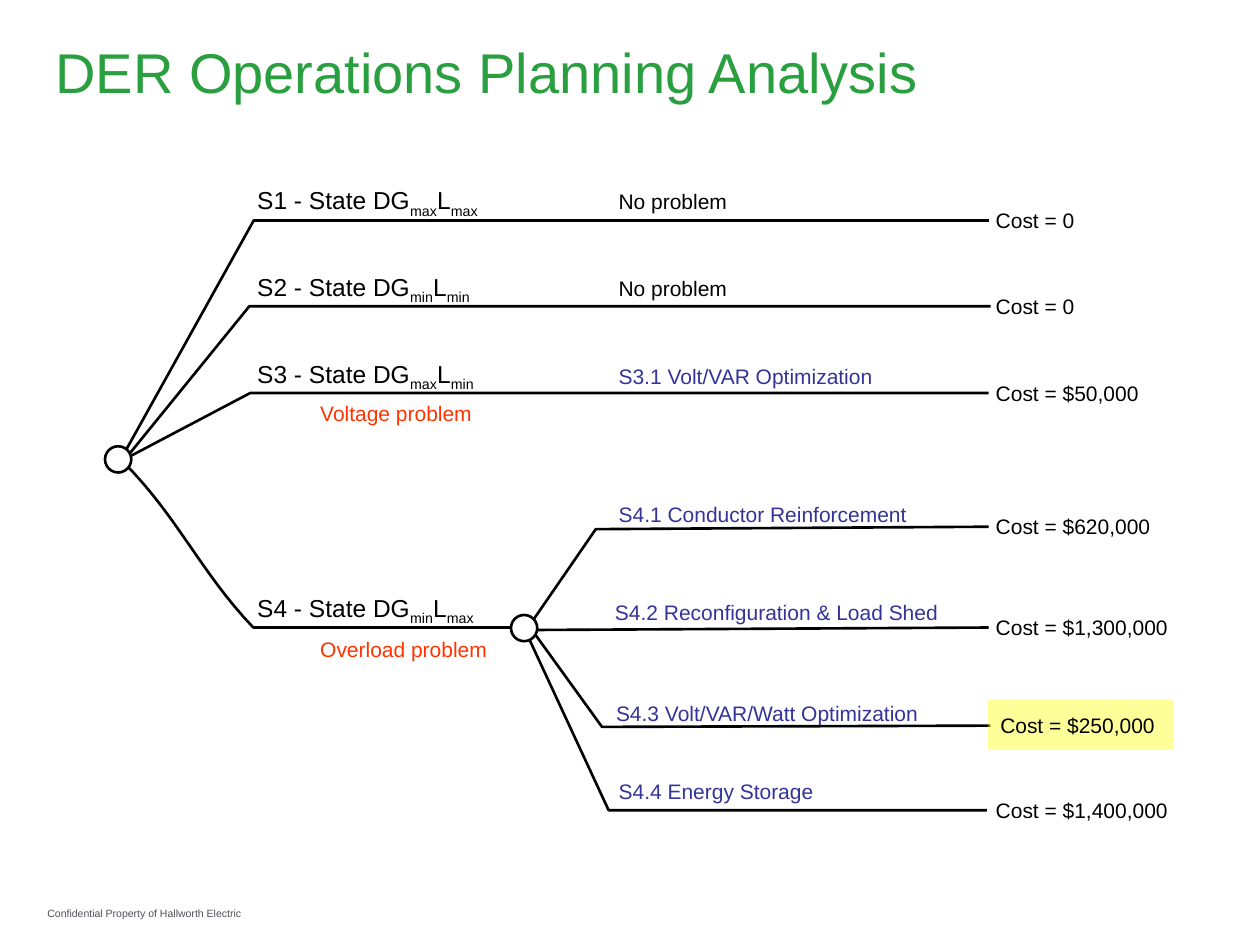
from dataclasses import dataclass

from lxml import etree
from pptx import Presentation
from pptx.dml.color import RGBColor
from pptx.enum.shapes import MSO_CONNECTOR, MSO_SHAPE
from pptx.enum.text import MSO_ANCHOR
from pptx.oxml.ns import qn
from pptx.util import Pt

LINE = MSO_CONNECTOR.STRAIGHT
OVAL = MSO_SHAPE.OVAL
RECT = MSO_SHAPE.RECTANGLE
MID = MSO_ANCHOR.MIDDLE
TOP = MSO_ANCHOR.TOP


@dataclass(frozen=True)
class Theme:
    """Colours, type sizes and line width of the slide."""
    face: str = "Arial"
    ink: str = "000000"
    paper: str = "FFFFFF"
    green: str = "299F3F"
    blue: str = "333399"
    red: str = "FF3300"
    gold: str = "FFFF00"
    gray: str = "4F5156"
    head: float = 32
    state: float = 14
    body: float = 12
    foot: float = 6
    rule: float = 1.5


T = Theme()
NODE = 15
STATES = [
    ("S1", "max", "max", 6, [(11, 159), (85, 26), (505, 26)], "No problem", 8, "Cost = 0"),
    ("S2", "min", "min", 55.5, [(11, 163), (82.5, 75), (506, 75)], "No problem", 57.5, "Cost = 0"),
    ("S3", "max", "min", 105, [(12, 162), (83, 124.6), (505, 124.6)],
     "S3.1 Volt/VAR Optimization", 108, "Cost = $50,000"),
]
BEND = [(10.6, 164.2), (41.5, 195.2), (54.5, 226.9), (84.7, 258.6)]
PROBLEMS = [("Voltage problem", 129), ("Overload problem", 263.6)]
OPTIONS = [
    ("S4.1 Conductor Reinforcement", 61.5, 6.6, [(9.5, 79), (48.5, 22.4), (273, 21)],
     "Cost = $620,000"),
    ("S4.2 Reconfiguration & Load Shed", 59.4, 62.7, [(12.5, 80), (273, 78.6)],
     "Cost = $1,300,000"),
    ("S4.3 Volt/VAR/Watt Optimization", 60, 120.3, [(12, 80), (52, 135.4), (274, 134.7)],
     "Cost = $250,000"),
    ("S4.4 Energy Storage", 61.5, 165, [(8, 80), (55.8, 183), (272, 183)],
     "Cost = $1,400,000"),
]
BEST = "Cost = $250,000"


def style(para, size, color):
    """Set the font of a paragraph."""
    para.font.name = T.face
    para.font.size = Pt(size)
    para.font.color.rgb = RGBColor.from_string(color)


def label(slide, box, text, size=T.body, color=T.ink, pad=(0, 0), anchor=TOP):
    """Place one line of text and return its paragraph."""
    frame = slide.shapes.add_textbox(*map(Pt, box)).text_frame
    frame.word_wrap = True
    frame.vertical_anchor = anchor
    frame.margin_left = frame.margin_right = Pt(pad[0])
    frame.margin_top = frame.margin_bottom = Pt(pad[1])
    para = frame.paragraphs[0]
    para.text = text
    style(para, size, color)
    return para


def stroke(shape):
    """Give a shape or connector the tree's line."""
    shape.line.color.rgb = RGBColor.from_string(T.ink)
    shape.line.width = Pt(T.rule)


def branch(slide, left, top, points):
    """Draw a branch through points measured from left and top."""
    dots = [(Pt(left + x), Pt(top + y)) for x, y in points]
    if len(dots) == 2:
        shape = slide.shapes.add_connector(LINE, *dots[0], *dots[1])
        etree.SubElement(shape._element.spPr, qn("a:effectLst"))
    else:
        maker = slide.shapes.build_freeform(*dots[0])
        maker.add_line_segments(dots[1:], close=False)
        shape = maker.convert_to_shape()
        shape.fill.background()
        shape.shadow.inherit = False
    stroke(shape)


def node(slide, left, top):
    """Draw a round decision node."""
    shape = slide.shapes.add_shape(OVAL, Pt(left), Pt(top), Pt(NODE), Pt(NODE))
    shape.shadow.inherit = False
    shape.fill.solid()
    shape.fill.fore_color.rgb = RGBColor.from_string(T.paper)
    stroke(shape)


def curve(a, b, c, d, steps=16):
    """Return points along a cubic curve."""
    def blend(p, q, r, s, t):
        u = 1 - t
        return u**3 * p + 3 * u * u * t * q + 3 * u * t * t * r + t**3 * s
    return [tuple(blend(*axis, i / steps) for axis in zip(a, b, c, d))
            for i in range(steps + 1)]


def state(slide, left, top, name, gen, load):
    """Write a state name with its two subscripts."""
    para = label(slide, (left, top, 199, 17), f"{name} - State DG", T.state)
    for text, low in ((gen, True), ("L", False), (load, True)):
        run = para.add_run()
        run.text = text
        if low:
            run._r.get_or_add_rPr().set("baseline", "-25000")


def cost(slide, left, top, text):
    """Write a cost beside the end of a branch, tinted if best."""
    if text != BEST:
        label(slide, (left, top - 7.4, 120, 14.4), text)
        return
    shape = slide.shapes.add_shape(RECT, Pt(left - 4.5), Pt(top - 15), Pt(106), Pt(28.8))
    shape.shadow.inherit = False
    shape.line.fill.background()
    shape.fill.solid()
    shape.fill.fore_color.rgb = RGBColor.from_string(T.gold)
    tint = shape._element.spPr.find(".//" + qn("a:srgbClr"))
    etree.SubElement(tint, qn("a:alpha"), val="40000")
    label(slide, (left - 4.5, top - 15, 106, 28.8), text, pad=(7.2, 7.2))


def states(slide, box):
    """Draw the root node with its four states."""
    left, top, wide, _ = box
    for name, gen, load, row, points, act, line, price in STATES:
        branch(slide, left, top, points)
        state(slide, left + 87, top + row, name, gen, load)
        color = T.ink if act == "No problem" else T.blue
        label(slide, (left + 293.5, top + line, 199, 14.4), act, color=color)
        cost(slide, left + wide, top + points[-1][1], price)
    branch(slide, left, top, curve(*BEND) + [(237.4, 258.6)])
    state(slide, left + 87, top + 239, "S4", "min", "max")
    for text, row in PROBLEMS:
        label(slide, (left + 123, top + row, 122, 14.4), text, color=T.red)
    node(slide, left, top + 155)


def options(slide, box):
    """Draw the second node with the four answers to the overload."""
    left, top, wide, _ = box
    for text, col, row, points, price in OPTIONS:
        branch(slide, left, top, points)
        label(slide, (left + col, top + row, 228, 14.4), text, color=T.blue)
        cost(slide, left + wide, top + points[-1][1], price)
    node(slide, left, top + 71.4)


def title(slide, box):
    """Write the slide title."""
    label(slide, box, "DER Operations Planning Analysis", T.head, T.green, (7.2, 3.6), MID)


def footer(slide, box):
    """Write the footer line."""
    label(slide, box, "Confidential Property of Hallworth Electric", T.foot, T.gray, (7.2, 3.6))


def main():
    """Build the slide and save it."""
    deck = Presentation()
    deck.slide_width, deck.slide_height = Pt(720), Pt(540)
    slide = deck.slides.add_slide(deck.slide_layouts[6])
    footer(slide, (20, 515, 160, 11))
    states(slide, (60, 100, 509, 280))
    options(slide, (292, 280, 277, 190))
    title(slide, (24.5, 21, 652, 39))
    deck.save("out.pptx")


if __name__ == "__main__":
    main()
